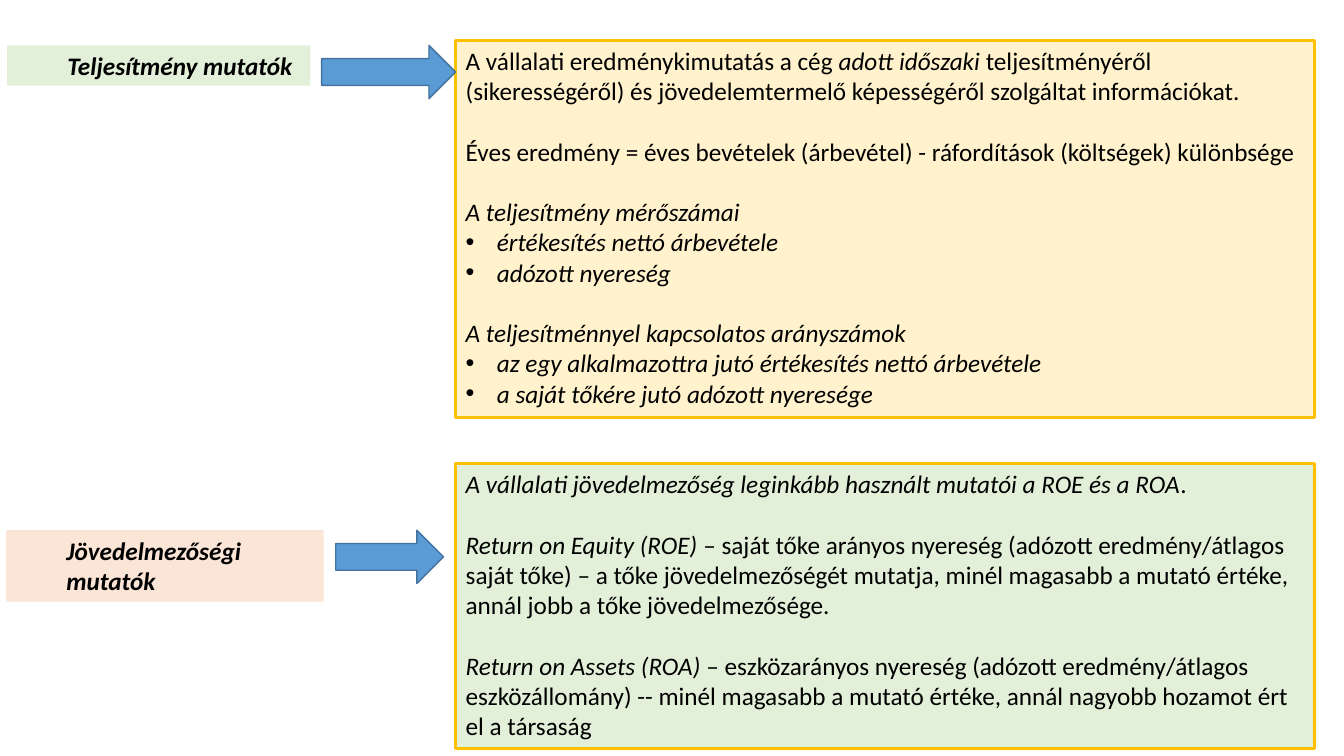
"""Build the slide on performance and profitability indicators."""
from dataclasses import dataclass

from lxml import etree
from pptx import Presentation
from pptx import util as u
from pptx.dml.color import RGBColor
from pptx.enum import shapes, text
from pptx.oxml import ns

BLACK = RGBColor(0x00, 0x00, 0x00)
GREEN = RGBColor(0xE2, 0xF0, 0xD9)
CREAM = RGBColor(0xFF, 0xF2, 0xCC)
PEACH = RGBColor(0xFB, 0xE5, 0xD6)
GOLD = RGBColor(0xFF, 0xC0, 0x00)
BLUE = RGBColor(0x5B, 0x9B, 0xD5)
DARK_BLUE = RGBColor(0x43, 0x73, 0x9E)
BLANK_LINE = u.Pt(21.6)
DETAIL_LEFT, DETAIL_WIDTH = 4.52, 8.52


@dataclass(frozen=True)
class Run:
    words: str
    italic: bool = False


@dataclass(frozen=True)
class Para:
    runs: tuple[Run, ...]
    bold: bool = False
    bullet: bool = False
    gap: bool = False
    indent: float = 0


@dataclass(frozen=True)
class Box:
    left: float
    top: float
    width: float
    height: float


@dataclass(frozen=True)
class Panel:
    box: Box
    fill: RGBColor
    paras: tuple[Para, ...]
    outlined: bool = False


def italic(words: str, bullet: bool = False, gap: bool = False) -> Para:
    """Return a paragraph set wholly in italics."""
    return Para((Run(words, True),), bullet=bullet, gap=gap)


def label(box: Box, fill: RGBColor, words: str) -> Panel:
    """Return a topic label with indented bold italic text."""
    return Panel(box, fill, (Para((Run(words, True),), bold=True, indent=0.5),))


def detail(top: float, height: float, fill: RGBColor, *paras: Para) -> Panel:
    """Return an outlined explanation in the right-hand column."""
    return Panel(Box(DETAIL_LEFT, top, DETAIL_WIDTH, height), fill, paras, True)


PANELS = (
    label(Box(0.07, 0.45, 3.01, 0.4), GREEN, "Teljesítmény mutatók"),
    detail(
        0.4, 3.74, CREAM,
        Para((
            Run("A vállalati eredménykimutatás a cég "),
            Run("adott időszaki", True),
            Run(" teljesítményéről (sikerességéről) és jövedelemtermelő "
                "képességéről szolgáltat információkat."),
        )),
        Para((Run("Éves eredmény = éves bevételek (árbevétel) - "
                  "ráfordítások (költségek) különbsége"),), gap=True),
        italic("A teljesítmény mérőszámai", gap=True),
        italic("értékesítés nettó árbevétele", bullet=True),
        italic("adózott nyereség", bullet=True),
        italic("A teljesítménnyel kapcsolatos arányszámok", gap=True),
        italic("az egy alkalmazottra jutó értékesítés nettó árbevétele", bullet=True),
        italic("a saját tőkére jutó adózott nyeresége", bullet=True),
    ),
    label(Box(0.06, 5.26, 3.15, 0.71), PEACH, "Jövedelmezőségi mutatók"),
    detail(
        4.6, 2.83, GREEN,
        Para((
            Run("A vállalati jövedelmezőség leginkább használt mutatói "
                "a ROE és a ROA", True),
            Run("."),
        )),
        Para((
            Run("Return on Equity (ROE)", True),
            Run(" – saját tőke arányos nyereség (adózott eredmény/átlagos "
                "saját tőke) – a tőke jövedelmezőségét mutatja, minél magasabb "
                "a mutató értéke, annál jobb a tőke jövedelmezősége."),
        ), gap=True),
        Para((
            Run("Return on Assets (ROA) ", True),
            Run("– eszközarányos nyereség (adózott eredmény/átlagos "
                "eszközállomány) -- minél magasabb a mutató értéke, annál "
                "nagyobb hozamot ért el a társaság"),
        ), gap=True),
    ),
)
ARROWS = (Box(3.19, 0.45, 1.33, 0.53), Box(3.33, 5.26, 1.07, 0.53))


def add_box(slide, preset, box: Box, fill: RGBColor):
    """Add a filled preset shape without shadow."""
    shape = slide.shapes.add_shape(
        preset, u.Inches(box.left), u.Inches(box.top),
        u.Inches(box.width), u.Inches(box.height))
    shape.shadow.inherit = False
    shape.fill.solid()
    shape.fill.fore_color.rgb = fill
    return shape


def set_outline(shape, color: RGBColor, points: float) -> None:
    """Give a shape a solid outline."""
    shape.line.color.rgb = color
    shape.line.width = u.Pt(points)


def write_para(paragraph, para: Para) -> None:
    """Fill one paragraph with its runs and layout."""
    paragraph.alignment = text.PP_ALIGN.LEFT
    paragraph.font.name = "Calibri"
    paragraph.font.size = u.Pt(18)
    paragraph.font.bold = para.bold
    paragraph.font.color.rgb = BLACK
    if para.gap:
        paragraph.space_before = BLANK_LINE
    same_slant = len({run.italic for run in para.runs}) == 1
    if same_slant:
        paragraph.font.italic = para.runs[0].italic
    for part in para.runs:
        run = paragraph.add_run()
        run.text = part.words
        if not same_slant:
            run.font.italic = part.italic
    properties = paragraph._p.get_or_add_pPr()
    hanging = 0.31 if para.bullet else 0
    properties.set("marL", str(u.Inches(para.indent + hanging)))
    properties.set("indent", str(u.Inches(-hanging)))
    if para.bullet:
        mark = etree.Element(ns.qn("a:buChar"), char="•")
        properties.find(ns.qn("a:defRPr")).addprevious(mark)
        mark.addprevious(etree.Element(ns.qn("a:buFont"), typeface="Arial"))


def draw_panel(slide, panel: Panel) -> None:
    """Draw a label or an explanation."""
    shape = add_box(slide, shapes.MSO_SHAPE.RECTANGLE, panel.box, panel.fill)
    if panel.outlined:
        set_outline(shape, GOLD, 2.25)
    else:
        shape.line.fill.background()
    frame = shape.text_frame
    frame.word_wrap = True
    frame.vertical_anchor = text.MSO_ANCHOR.TOP
    for index, para in enumerate(panel.paras):
        write_para(frame.add_paragraph() if index else frame.paragraphs[0], para)


def main() -> None:
    """Assemble and save the presentation."""
    deck = Presentation()
    deck.slide_width, deck.slide_height = u.Inches(13.33), u.Inches(7.5)
    slide = deck.slides.add_slide(deck.slide_layouts[6])
    for panel in PANELS:
        draw_panel(slide, panel)
    for box in ARROWS:
        arrow = add_box(slide, shapes.MSO_SHAPE.RIGHT_ARROW, box, BLUE)
        set_outline(arrow, DARK_BLUE, 1)
    deck.save("out.pptx")


if __name__ == "__main__":
    main()
